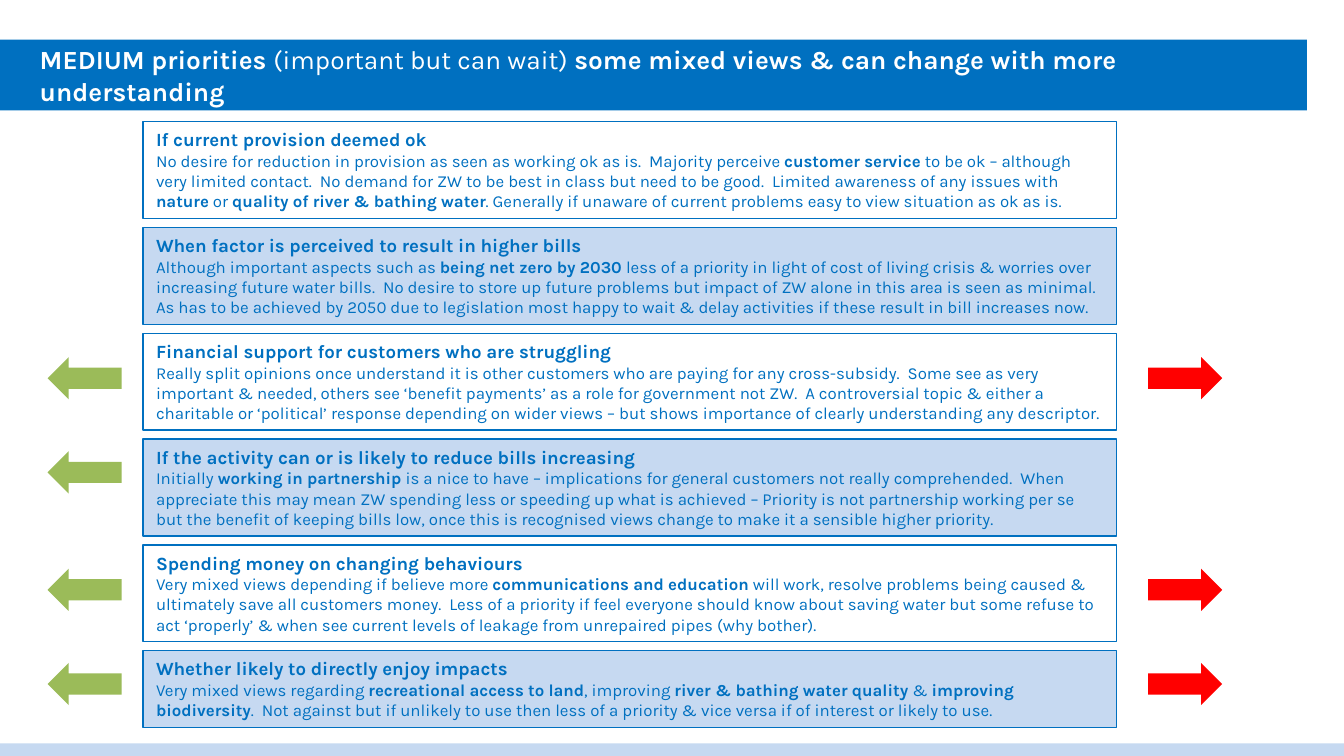
import dataclasses

import pptx
import pptx.dml.color
import pptx.enum.shapes
import pptx.enum.text
import pptx.util

Cm = pptx.util.Cm
Pt = pptx.util.Pt
RGB = pptx.dml.color.RGBColor.from_string
SHAPE = pptx.enum.shapes.MSO_SHAPE
TEXT = pptx.enum.text


@dataclasses.dataclass(frozen=True)
class Theme:
    font: str = "Karla"
    blue: str = "0070C0"
    pale: str = "C6D9F1"
    white: str = "FFFFFF"
    green: str = "9BBB59"
    red: str = "FF0000"
    title_size: int = 14
    heading_size: int = 10
    body_size: int = 9


@dataclasses.dataclass(frozen=True)
class Priority:
    heading: str
    body: str
    up: bool = False
    down: bool = False
    arrow_drop: float = 0.45
    height: float = 1.83


THEME = Theme()

TITLE = (
    "**MEDIUM priorities **(important but can wait) "
    "**some mixed views & can change with more understanding**"
)

PRIORITIES = [
    Priority(
        "If current provision deemed ok",
        "No desire for reduction in provision as seen as working ok as is.  Majority perceive "
        "**customer service **to be ok – although very limited contact.  No demand for ZW to be "
        "best in class but need to be good.  Limited awareness of any issues with **nature** or "
        "**quality of river & bathing water**. Generally if unaware of current problems easy to "
        "view situation as ok as is.",
    ),
    Priority(
        "When factor is perceived to result in higher bills",
        "Although important aspects such as **being net zero by 2030 **less of a priority in "
        "light of cost of living crisis & worries over increasing future water bills.  No desire "
        "to store up future problems but impact of ZW alone in this area is seen as minimal.  As "
        "has to be achieved by 2050 due to legislation most happy to wait & delay activities if "
        "these result in bill increases now.",
    ),
    Priority(
        "Financial support for customers who are struggling",
        "Really split opinions once understand it is other customers who are paying for any "
        "cross-subsidy.  Some see as very important & needed, others see ‘benefit payments’ as a "
        "role for government not ZW.  A controversial topic & either a charitable or ‘political’ "
        "response depending on wider views – but shows importance of clearly understanding any "
        "descriptor.",
        up=True, down=True,
    ),
    Priority(
        "If the activity can or is likely to reduce bills increasing",
        "Initially** working in partnership **is a nice to have – implications for general "
        "customers not really comprehended.  When appreciate this may mean ZW spending less or "
        "speeding up what is achieved – Priority is not partnership working per se but the "
        "benefit of keeping bills low, once this is recognised views change to make it a "
        "sensible higher priority.",
        up=True, arrow_drop=0.23,
    ),
    Priority(
        "Spending money on changing behaviours",
        "Very mixed views depending if believe more **communications and education **will work, "
        "resolve problems being caused & ultimately save all customers money.  Less of a "
        "priority if feel everyone should know about saving water but some refuse to act "
        "‘properly’ & when see current levels of leakage from unrepaired pipes (why bother).",
        up=True, down=True,
    ),
    Priority(
        "Whether likely to directly enjoy impacts",
        "Very mixed views regarding **recreational access to land**, improving **river & bathing "
        "water quality **& **improving biodiversity**.  Not against but if unlikely to use then "
        "less of a priority & vice versa if of interest or likely to use.",
        up=True, down=True, arrow_drop=0.23, height=1.45,
    ),
]


def add_block(slide, kind, left, top, width, height, fill, line=None):
    block = slide.shapes.add_shape(kind, Cm(left), Cm(top), Cm(width), Cm(height))
    block.shadow.inherit = False
    block.fill.solid()
    block.fill.fore_color.rgb = RGB(fill)
    if line:
        block.line.color.rgb = RGB(line)
        block.line.width = Pt(0.75)
    else:
        block.line.fill.background()
    return block


def write_marked(paragraph, marked, size, color):
    paragraph.alignment = TEXT.PP_ALIGN.LEFT
    for position, words in enumerate(marked.split("**")):
        if words:
            run = paragraph.add_run()
            run.text = words
            run.font.name = THEME.font
            run.font.size = Pt(size)
            run.font.bold = position % 2 == 1
            run.font.color.rgb = RGB(color)


def add_title_band(slide, left, top, width, height):
    band = add_block(slide, SHAPE.RECTANGLE, left, top, width, height, THEME.blue)
    frame = band.text_frame
    frame.word_wrap = True
    frame.vertical_anchor = TEXT.MSO_ANCHOR.MIDDLE
    headline = frame.paragraphs[0]
    write_marked(headline, TITLE, THEME.title_size, THEME.white)
    headline._p.get_or_add_pPr().set("marL", str(Cm(0.5)))


def add_priority_box(slide, priority, left, top, width, fill):
    box = add_block(slide, SHAPE.RECTANGLE, left, top, width, priority.height, fill, THEME.blue)
    frame = box.text_frame
    frame.word_wrap = True
    frame.auto_size = TEXT.MSO_AUTO_SIZE.SHAPE_TO_FIT_TEXT
    frame.vertical_anchor = TEXT.MSO_ANCHOR.TOP
    write_marked(frame.paragraphs[0], f"**{priority.heading}**", THEME.heading_size, THEME.blue)
    write_marked(frame.add_paragraph(), priority.body, THEME.body_size, THEME.blue)


def add_priority_rows(slide, left, top, width, pitch):
    arrow_width, arrow_height = 1.4, 0.8
    for index, priority in enumerate(PRIORITIES):
        row_top = top + index * pitch
        fill = THEME.pale if index % 2 else THEME.white
        add_priority_box(slide, priority, left, row_top, width, fill)
        arrow_top = row_top + priority.arrow_drop
        if priority.up:
            add_block(slide, SHAPE.LEFT_ARROW, left - 1.8, arrow_top,
                      arrow_width, arrow_height, THEME.green)
        if priority.down:
            add_block(slide, SHAPE.RIGHT_ARROW, left + width + 0.6, arrow_top,
                      arrow_width, arrow_height, THEME.red)


def main():
    deck = pptx.Presentation()
    deck.slide_width = Cm(25.4)
    deck.slide_height = Cm(14.29)
    slide = deck.slides.add_slide(deck.slide_layouts[6])
    add_block(slide, SHAPE.RECTANGLE, 0, 14.05, 25.4, 0.24, THEME.pale)
    add_title_band(slide, 0, 0.75, 24.7, 1.34)
    add_priority_rows(slide, 2.7, 2.3, 18.4, 2)
    deck.save("out.pptx")


if __name__ == "__main__":
    main()
